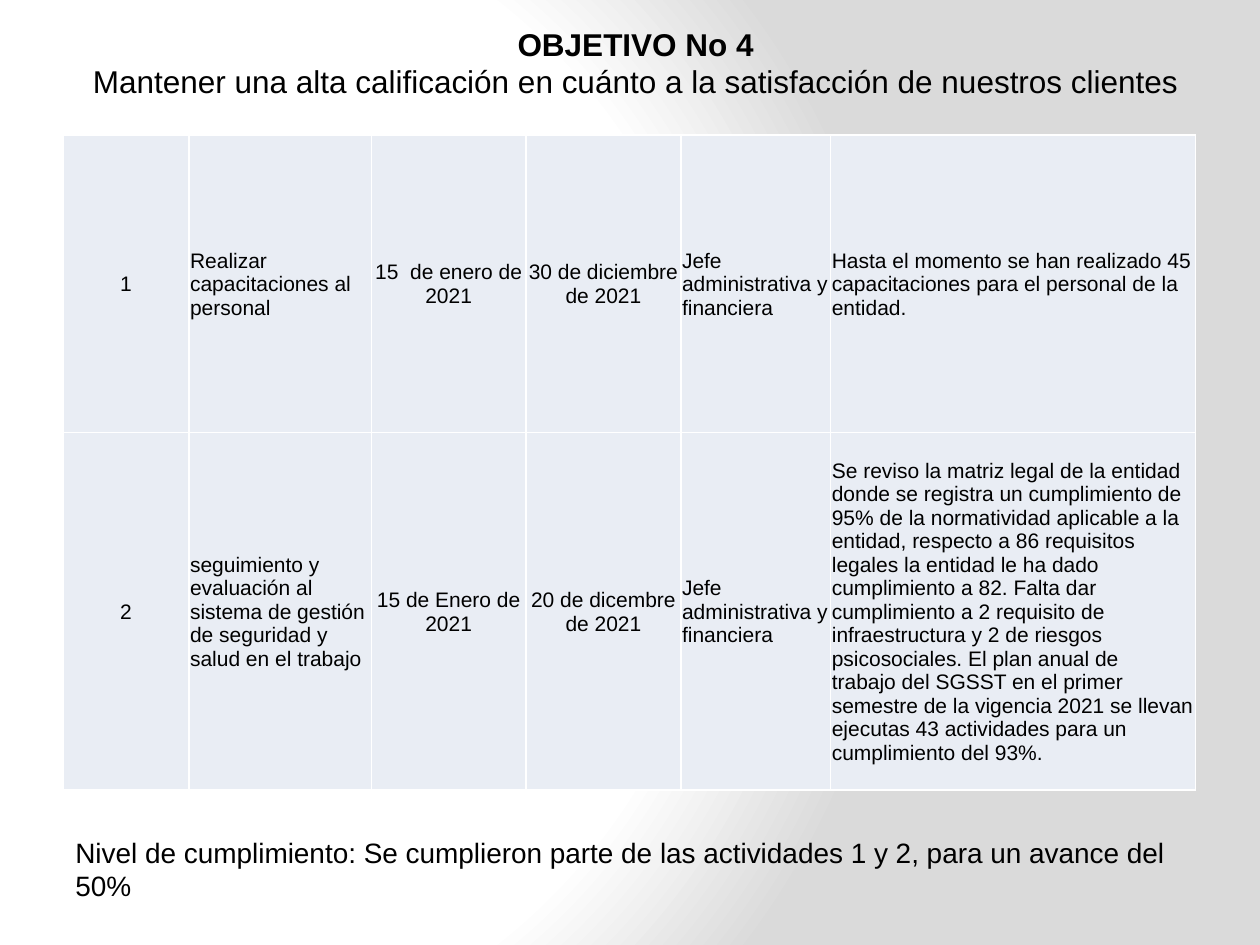
from pptx import Presentation
from pptx.dml.color import RGBColor
from pptx.enum.text import MSO_ANCHOR, MSO_AUTO_SIZE, PP_ALIGN
from pptx.oxml import parse_xml
from pptx.oxml.ns import nsdecls, qn
from pptx.util import Inches, Pt

MIDDLE = MSO_ANCHOR.MIDDLE
NO_FIT = MSO_AUTO_SIZE.NONE
LEFT, CENTER = PP_ALIGN.LEFT, PP_ALIGN.CENTER

BLACK = RGBColor(0x00, 0x00, 0x00)
WHITE = RGBColor(0xFF, 0xFF, 0xFF)
GREY = RGBColor(0xDA, 0xDA, 0xDA)
CELL_BLUE = RGBColor(0xE9, 0xED, 0xF4)
FONT = "Arial"

TITLE_LINES = [
    "OBJETIVO No 4",
    "Mantener una alta calificación en cuánto a la satisfacción de nuestros clientes",
]
COMPLIANCE = ("Nivel de cumplimiento: Se cumplieron parte de las actividades 1 y 2, "
              "para un avance del 50%")
OWNER = "Jefe administrativa y financiera"
ACTIVITIES = [
    ["1", "Realizar capacitaciones al personal", "15  de enero de 2021",
     "30 de diciembre de 2021", OWNER,
     "Hasta el momento se han realizado 45 capacitaciones para el personal de la entidad."],
    ["2", "seguimiento y evaluación al sistema de gestión de seguridad y salud en el trabajo",
     "15 de Enero de 2021", "20 de dicembre de 2021", OWNER,
     "Se reviso la matriz legal de la entidad donde se registra un cumplimiento de 95% "
     "de la normatividad aplicable a la entidad, respecto a 86 requisitos legales la "
     "entidad le ha dado cumplimiento a 82. Falta dar cumplimiento a 2 requisito de "
     "infraestructura y 2 de riesgos psicosociales. El plan anual de  trabajo del SGSST "
     "en el primer semestre de la vigencia 2021 se llevan ejecutas 43 actividades para un "
     "cumplimiento del 93%."],
]
COLUMN_WIDTHS = [1, 1.45, 1.23, 1.23, 1.19, 2.9]
COLUMN_ALIGNS = [CENTER, LEFT, CENTER, CENTER, LEFT, LEFT]
ROW_HEIGHTS = [2.36, 2.83]


def style_paragraph(paragraph, size, align=LEFT, bold=False):
    paragraph.alignment = align
    for run in paragraph.runs:
        run.font.name = FONT
        run.font.size = Pt(size)
        run.font.bold = bold
        run.font.color.rgb = BLACK


def paint_background(slide):
    slide.background.fill.gradient()
    linear = slide.element.find(".//" + qn("a:gradFill"))
    stops = "".join(
        f'<a:gs pos="{percent * 1000}"><a:srgbClr val="{color}"/></a:gs>'
        for percent, color in [(0, WHITE), (75, WHITE), (100, GREY)])
    radial = parse_xml(
        f'<a:gradFill {nsdecls("a")} rotWithShape="1"><a:gsLst>{stops}</a:gsLst>'
        '<a:path path="circle">'
        '<a:fillToRect l="20000" t="50000" r="100000" b="50000"/>'
        '</a:path></a:gradFill>')
    linear.getparent().replace(linear, radial)


def place_title(slide, left, top, width, height):
    title = slide.shapes.title
    title.left, title.top, title.width, title.height = left, top, width, height
    frame = title.text_frame
    frame.text = "\n".join(TITLE_LINES)
    frame.word_wrap = True
    frame.auto_size = NO_FIT
    frame.vertical_anchor = MIDDLE
    for index, paragraph in enumerate(frame.paragraphs):
        style_paragraph(paragraph, 18, CENTER, bold=index == 0)


def border_cell(cell):
    properties = cell._tc.get_or_add_tcPr()
    for index, side in enumerate(["lnL", "lnR", "lnT", "lnB"]):
        properties.insert(index, parse_xml(
            f'<a:{side} {nsdecls("a")} w="{Pt(1)}"><a:solidFill>'
            f'<a:srgbClr val="{WHITE}"/></a:solidFill></a:{side}>'))


def place_activities(slide, left, top, width, height):
    table = slide.shapes.add_table(
        len(ROW_HEIGHTS), len(COLUMN_WIDTHS), left, top, width, height).table
    table.first_row = table.horz_banding = False
    # Column and row shares fill the given box
    for column, share in zip(table.columns, COLUMN_WIDTHS):
        column.width = int(width * share / sum(COLUMN_WIDTHS))
    for row, share in zip(table.rows, ROW_HEIGHTS):
        row.height = int(height * share / sum(ROW_HEIGHTS))

    for row, texts in zip(table.rows, ACTIVITIES):
        for cell, text, align in zip(row.cells, texts, COLUMN_ALIGNS):
            cell.text_frame.text = text
            style_paragraph(cell.text_frame.paragraphs[0], 12, align)
            cell.vertical_anchor = MIDDLE
            cell.margin_left = cell.margin_right = cell.margin_top = Inches(0.01)
            cell.margin_bottom = 0
            cell.fill.solid()
            cell.fill.fore_color.rgb = CELL_BLUE
            border_cell(cell)


def place_compliance(slide, left, top, width, height):
    frame = slide.shapes.add_textbox(left, top, width, height).text_frame
    frame.word_wrap = True
    frame.text = COMPLIANCE
    style_paragraph(frame.paragraphs[0], 16)


def main():
    deck = Presentation()
    deck.slide_width, deck.slide_height = Inches(10), Inches(7.5)
    slide = deck.slides.add_slide(deck.slide_layouts[5])  # title only
    paint_background(slide)
    place_title(slide, Inches(0.24), Inches(-0.32), Inches(9.61), Inches(1.63))
    place_compliance(slide, Inches(0.5), Inches(6.58), Inches(9.1), Inches(0.64))
    place_activities(slide, Inches(0.5), Inches(1.07), Inches(8.99), Inches(5.2))
    deck.save("out.pptx")


if __name__ == "__main__":
    main()
